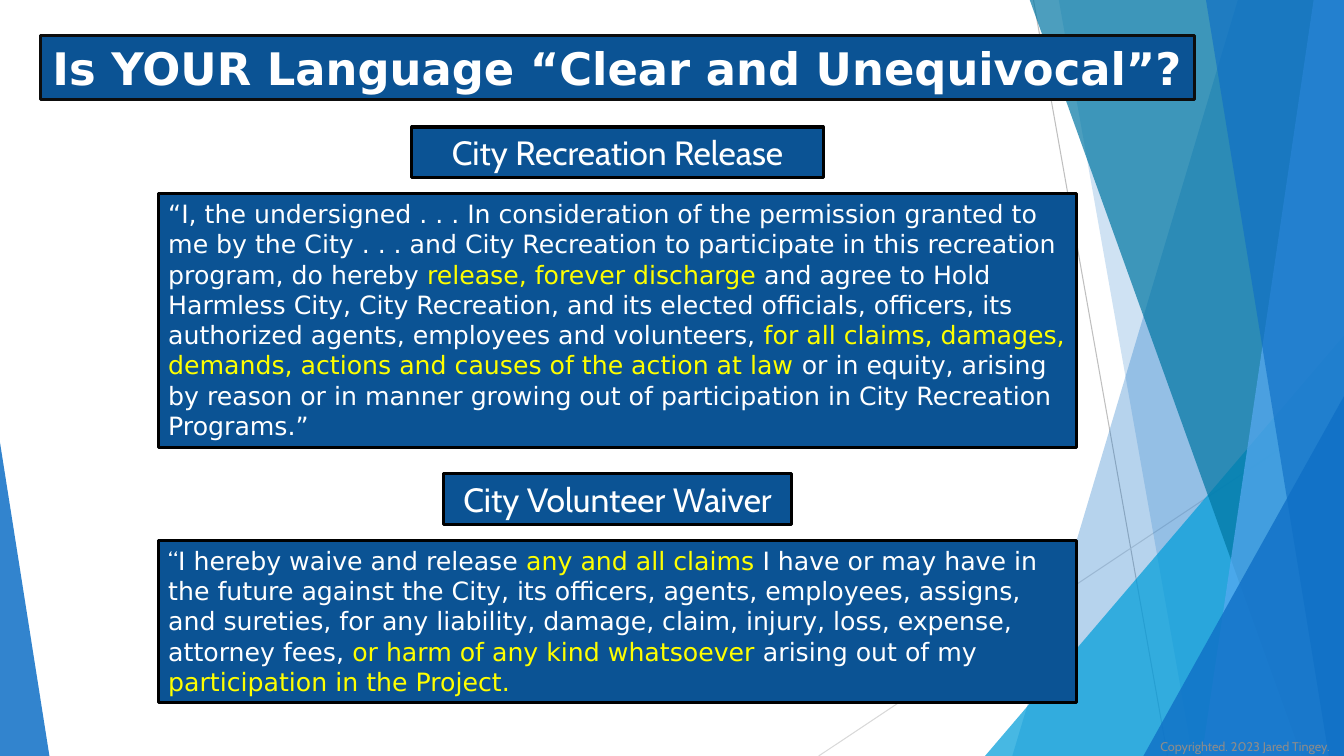
from dataclasses import dataclass

from lxml.etree import SubElement
from pptx import Presentation
from pptx.dml.color import RGBColor
from pptx.enum.shapes import MSO_CONNECTOR, MSO_SHAPE
from pptx.enum.text import MSO_ANCHOR, PP_ALIGN
from pptx.oxml.ns import qn
from pptx.util import Inches, Pt


@dataclass(frozen=True)
class Theme:
    """Colours, fonts and type sizes of the slide."""
    panel: str = "0B5394"
    white: str = "FFFFFF"
    mark: str = "FFFF00"
    black: str = "000000"
    ink: str = "0D0D0D"
    gray: str = "8C8C8C"
    rule: str = "BFBFBF"
    pale: str = "D9D9D9"
    blue: str = "0F6FC6"
    cyan: str = "009DD9"
    teal: str = "0076A3"
    sky: str = "59AAF2"
    sans: str = "DejaVu Sans"
    soft: str = "Cabin"
    title: int = 32
    head: int = 24
    body: int = 18
    note: int = 9


THEME = Theme()


def color(code):
    """Turn a hex code into a colour."""
    return RGBColor.from_string(code)


def paint(shape, code, alpha):
    """Fill a borderless shape with a see-through colour."""
    shape.shadow.inherit = False
    shape.line.fill.background()
    shape.fill.solid()
    shape.fill.fore_color.rgb = color(code)
    tint = shape.element.spPr.find(qn("a:solidFill"))[0]
    SubElement(tint, qn("a:alpha")).set("val", str(alpha * 1000))


def band(slide, box, top, foot, code, alpha):
    """Draw a slanted band from two edge points to the right side of the box."""
    left, head, width, height = box
    right, base = left + width, head + height
    start = head - 0.01
    pen = slide.shapes.build_freeform(Inches(left + top), Inches(start))
    points = [(right, start), (right, base), (left + foot, base)]
    pen.add_line_segments([(Inches(x), Inches(y)) for x, y in points], close=True)
    paint(pen.convert_to_shape(), code, alpha)


def wedge(slide, box, width, height, peak, code, alpha):
    """Draw a triangle in the lower corner of the box on the side of its peak."""
    left = box[0] + peak * (box[2] - width)
    top = box[1] + box[3] - height
    shape = slide.shapes.add_shape(MSO_SHAPE.ISOSCELES_TRIANGLE, Inches(left),
                                   Inches(top), Inches(width), Inches(height))
    shape.adjustments[0] = peak
    paint(shape, code, alpha)


def rule(slide, box, start, end, code):
    """Draw a thin line between two points of the box."""
    ends = [Inches(box[i] + point[i]) for point in (start, end) for i in (0, 1)]
    line = slide.shapes.add_connector(MSO_CONNECTOR.STRAIGHT, *ends)
    line.line.color.rgb = color(code)
    line.line.width = Pt(0.75)
    SubElement(line.element.spPr, qn("a:effectLst"))


def write(shape, runs, size, font, code=THEME.white, bold=False,
          align=PP_ALIGN.LEFT, anchor=MSO_ANCHOR.TOP):
    """Write runs of text, each with its own colour and font if given."""
    frame = shape.text_frame
    frame.word_wrap = True
    frame.vertical_anchor = anchor
    para = frame.paragraphs[0]
    para.alignment = align
    for text, style in runs:
        run = para.add_run()
        run.text = text
        run.font.size = Pt(size)
        run.font.bold = bold
        run.font.name = style.get("font", font)
        run.font.color.rgb = color(style.get("code", code))


def panel(slide, box, runs, edge=THEME.black, **style):
    """Draw a bordered blue panel with text."""
    shape = slide.shapes.add_shape(MSO_SHAPE.RECTANGLE, *map(Inches, box))
    shape.shadow.inherit = False
    shape.fill.solid()
    shape.fill.fore_color.rgb = color(THEME.panel)
    shape.line.color.rgb = color(edge)
    shape.line.width = Pt(2.25)
    write(shape, runs, **style)


def clause(slide, box, head, wide, runs):
    """Place a centred heading panel over a panel of quoted text."""
    left, top, width, height = box
    panel(slide, (left + (width - wide) / 2, top, wide, 0.5), [(head, {})],
          size=THEME.head, font=THEME.soft, align=PP_ALIGN.CENTER)
    panel(slide, (left, top + 0.66, width, height - 0.66), runs,
          size=THEME.body, font=THEME.sans)


def facets(slide, box):
    """Draw the layered blue shapes behind the text."""
    rule(slide, box, (10.25, 0), (11.58, 7.5), THEME.rule)
    rule(slide, box, (13.33, 4.03), (8.12, 7.5), THEME.pale)
    band(slide, box, 12.28, 10.04, THEME.blue, 30)
    band(slide, box, 10.5, 11.83, THEME.blue, 20)
    wedge(slide, box, 3.56, 4.17, 1, THEME.cyan, 72)
    band(slide, box, 10.21, 12.91, THEME.teal, 70)
    band(slide, box, 13.03, 11.92, THEME.sky, 70)
    band(slide, box, 11.96, 13.18, THEME.blue, 65)
    wedge(slide, box, 1.99, 3.57, 1, THEME.blue, 80)
    wedge(slide, box, 0.49, 3.11, 0, THEME.blue, 85)


def credit(slide, box):
    """Write the copyright line."""
    shape = slide.shapes.add_textbox(*map(Inches, box))
    write(shape, [("Copyrighted. 2023 Jared Tingey.", {})], size=THEME.note,
          font=THEME.soft, code=THEME.gray, anchor=MSO_ANCHOR.MIDDLE)


def main():
    """Build and save the slide."""
    deck = Presentation()
    deck.slide_width, deck.slide_height = Inches(13.33), Inches(7.5)
    slide = deck.slides.add_slide(deck.slide_layouts[6])
    mark = {"code": THEME.mark}
    facets(slide, (0, 0, 13.33, 7.5))
    panel(slide, (0.4, 0.35, 11.45, 0.64),
          [("Is YOUR Language “Clear and Unequivocal”?", {})], edge=THEME.ink,
          size=THEME.title, font=THEME.sans, bold=True, align=PP_ALIGN.CENTER)
    credit(slide, (11.41, 7.25, 2.07, 0.31))
    clause(slide, (1.57, 1.26, 9.11, 3.18), "City Recreation Release", 4.08, [
        ("“I, the undersigned . . . In consideration of the permission granted "
         "to me by the City . . . and City Recreation to participate in this "
         "recreation program, do hereby ", {}),
        ("release, forever discharge", mark),
        (" and agree to Hold Harmless City, City Recreation, and its elected "
         "officials, officers, its authorized agents, employees and "
         "volunteers, ", {}),
        ("for all claims, damages, demands, actions and causes of the action "
         "at law ", mark),
        ("or in equity, arising by reason or in manner growing out of "
         "participation in City Recreation Programs.”", {})])
    clause(slide, (1.57, 4.7, 9.11, 2.27), "City Volunteer Waiver", 3.45, [
        ("“", {"font": THEME.soft}),
        ("I hereby waive and release ", {}),
        ("any and all claims ", mark),
        ("I have or may have in the future against the City, its officers, "
         "agents, employees, assigns, and sureties, for any liability, damage, "
         "claim, injury, loss, expense, attorney fees, ", {}),
        ("or harm of any kind whatsoever ", mark),
        ("arising out of my ", {}),
        ("participation in the Project.", mark)])
    deck.save("out.pptx")


if __name__ == "__main__":
    main()
